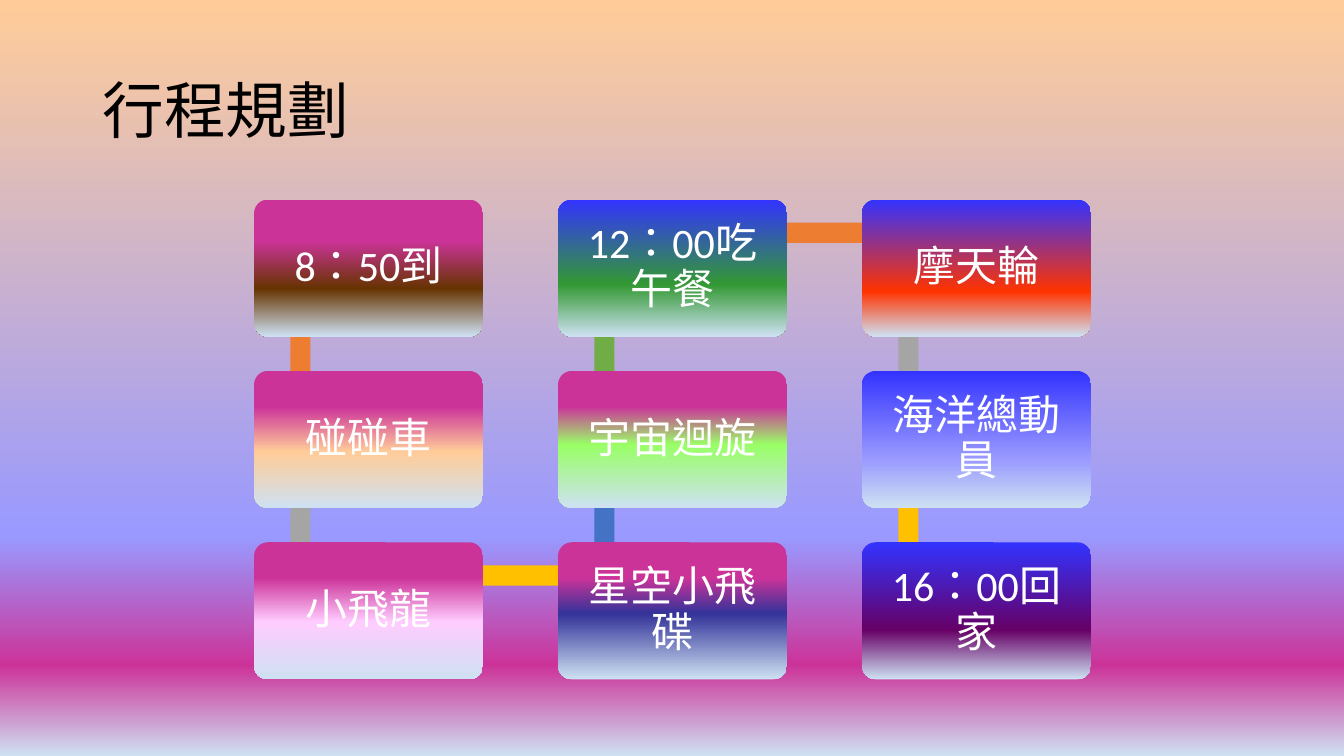
from dataclasses import dataclass
from itertools import pairwise

from lxml.etree import SubElement
from pptx import Presentation
from pptx.dml.color import RGBColor
from pptx.enum.shapes import MSO_SHAPE
from pptx.enum.text import MSO_ANCHOR, PP_ALIGN
from pptx.oxml.ns import qn
from pptx.util import Inches, Pt


@dataclass(frozen=True)
class Theme:
    font: str = "Calibri"
    title_size: int = 44
    card_size: int = 30
    black: str = "000000"
    white: str = "FFFFFF"
    pale: str = "CEE1F2"
    pink: str = "CC3399"
    blue: str = "3333FF"
    lilac: str = "9999FF"
    peach: str = "FFCC99"
    orange: str = "ED7D31"
    grey: str = "A5A5A5"
    gold: str = "FFC000"
    azure: str = "4472C4"
    green: str = "70AD47"


T = Theme()
LEFT, TOP = 2.52, 1.98
COL_STEP, ROW_STEP = 3.015, 1.7
CARD_W, CARD_H = 2.27, 1.36
ANCHOR_X, ANCHOR_Y = 0.46, 0.33
BAR = 0.2
INSET = 0.12

STOPS = [
    ("8：50到", 0, 0, (30, T.pink), (65, "663300")),
    ("碰碰車", 0, 1, (26, T.pink), (59, T.peach)),
    ("小飛龍", 0, 2, (26, T.pink), (58, "FFCCFF")),
    ("星空小飛碟", 1, 2, (26, T.pink), (52, "333399")),
    ("宇宙迴旋", 1, 1, (26, T.pink), (54, "99FF66")),
    ("12：00吃午餐", 1, 0, (0, T.blue), (62, "339933")),
    ("摩天輪", 2, 0, (0, T.blue), (67, "FF3300")),
    ("海洋總動員", 2, 1, (0, T.blue), (64, T.lilac)),
    ("16：00回家", 2, 2, (0, T.blue), (64, "660066")),
]
BAR_COLORS = [T.orange, T.grey, T.gold, T.azure, T.green, T.orange, T.grey, T.gold]


def set_gradient(fill, element, stops):
    fill.gradient()
    fill.gradient_angle = 270
    gs_lst = element.find(".//" + qn("a:gsLst"))
    for gs in list(gs_lst):
        gs_lst.remove(gs)
    for pos, color in stops:
        gs = SubElement(gs_lst, qn("a:gs"), pos=str(pos * 1000))
        SubElement(gs, qn("a:srgbClr"), val=color)


def write_text(sp, text, size, color, align, **frame):
    tf = sp.text_frame
    for name, value in {"word_wrap": True, "vertical_anchor": MSO_ANCHOR.MIDDLE, **frame}.items():
        setattr(tf, name, value)
    p = tf.paragraphs[0]
    p.alignment = align
    p.line_spacing = 0.9
    r = p.add_run()
    r.text = text
    for name, value in {"name": T.font, "size": Pt(size)}.items():
        setattr(r.font, name, value)
    r.font.color.rgb = RGBColor.from_string(color)
    r._r.get_or_add_rPr().set("lang", "zh-TW")


def add_box(s, kind, x, y, w, h):
    sp = s.shapes.add_shape(kind, Inches(x), Inches(y), Inches(w), Inches(h))
    sp.shadow.inherit = False
    sp.line.fill.background()
    return sp


def card_corner(col, row):
    return LEFT + col * COL_STEP, TOP + row * ROW_STEP


def add_bar(s, start, end, color):
    (x1, y1), (x2, y2) = card_corner(*start), card_corner(*end)
    x = min(x1, x2) + ANCHOR_X
    y = min(y1, y2) + ANCHOR_Y
    if x1 == x2:
        sp = add_box(s, MSO_SHAPE.RECTANGLE, x - BAR / 2, y, BAR, abs(y2 - y1))
    else:
        sp = add_box(s, MSO_SHAPE.RECTANGLE, x, y - BAR / 2, abs(x2 - x1), BAR)
    sp.fill.solid()
    sp.fill.fore_color.rgb = RGBColor.from_string(color)


def add_card(s, text, col, row, first, second):
    sp = add_box(s, MSO_SHAPE.ROUNDED_RECTANGLE, *card_corner(col, row), CARD_W, CARD_H)
    sp.adjustments[0] = 0.1
    set_gradient(sp.fill, sp.element, [first, second, (100, T.pale)])
    margins = {f"margin_{side}": Inches(INSET) for side in ("left", "top", "right", "bottom")}
    write_text(sp, text, T.card_size, T.white, PP_ALIGN.CENTER, **margins)


def add_title(s, text):
    sp = s.shapes.add_textbox(Inches(0.92), Inches(0.4), Inches(11.5), Inches(1.45))
    write_text(sp, text, T.title_size, T.black, PP_ALIGN.LEFT)


def main():
    prs = Presentation()
    prs.slide_width, prs.slide_height = Inches(13.33), Inches(7.5)
    s = prs.slides.add_slide(prs.slide_layouts[6])
    set_gradient(s.background.fill, s.element,
                 [(0, T.peach), (71, T.lilac), (88, T.pink), (100, T.pale)])
    add_title(s, "行程規劃")
    for (start, end), color in zip(pairwise(stop[1:3] for stop in STOPS), BAR_COLORS):
        add_bar(s, start, end, color)
    for stop in STOPS:
        add_card(s, *stop)
    prs.save("out.pptx")


if __name__ == "__main__":
    main()
